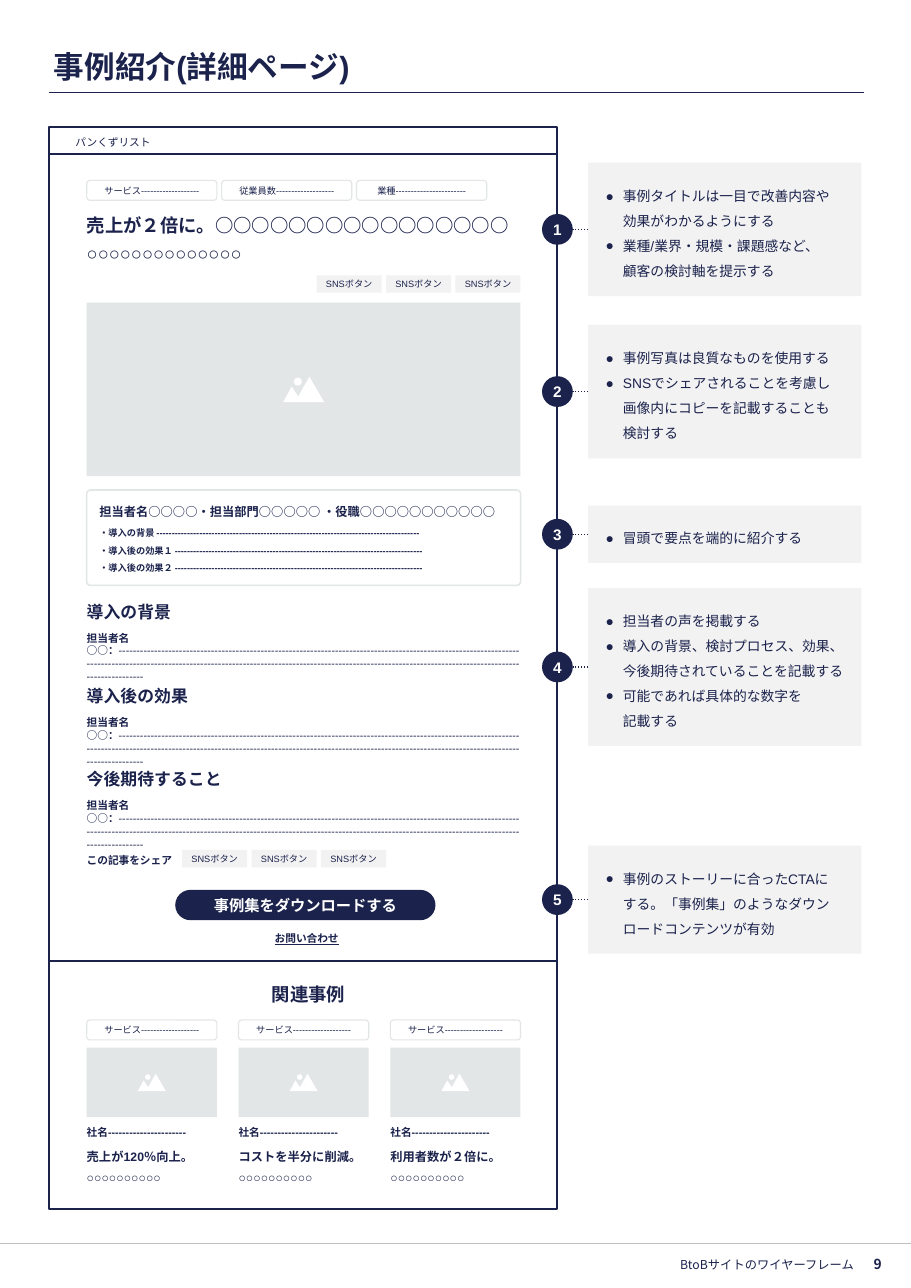
import math
from dataclasses import dataclass

from lxml import etree
from pptx import Presentation
from pptx.dml.color import RGBColor
from pptx.enum.dml import MSO_LINE
from pptx.enum.shapes import MSO_CONNECTOR, MSO_SHAPE
from pptx.enum.text import MSO_ANCHOR, PP_ALIGN
from pptx.oxml.ns import qn
from pptx.util import Cm, Pt

RECTANGLE, ROUNDED, OVAL = MSO_SHAPE.RECTANGLE, MSO_SHAPE.ROUNDED_RECTANGLE, MSO_SHAPE.OVAL
STRAIGHT, DOTTED = MSO_CONNECTOR.STRAIGHT, MSO_LINE.ROUND_DOT
TOP, MIDDLE = MSO_ANCHOR.TOP, MSO_ANCHOR.MIDDLE
LEFT, CENTER, RIGHT = PP_ALIGN.LEFT, PP_ALIGN.CENTER, PP_ALIGN.RIGHT
LEFT_SIDE = 1


@dataclass(frozen=True)
class Theme:
    navy: str = "1B224C"
    white: str = "FFFFFF"
    panel: str = "F2F2F2"
    image: str = "E2E6E6"
    rule: str = "BFBFBF"
    latin: str = "Arial"
    japanese: str = "Noto Sans CJK JP"
    title: int = 20
    headline: int = 12
    heading: int = 11
    button: int = 10
    note: int = 9
    result: int = 8
    label: int = 7
    small: int = 6


THEME = Theme()

TITLE = "事例紹介(詳細ページ)"
FOOTER, PAGE = "BtoBサイトのワイヤーフレーム", "9"
BREADCRUMB = "パンくずリスト"
SERVICE = "サービス" + "-" * 19
TAGS = [SERVICE, "従業員数" + "-" * 19, "業種" + "-" * 23]
HEADLINE = ["売上が２倍に。" + "○" * 16, "○" * 14]
SNS = "SNSボタン"
PERSON = "担当者名○○○○・担当部門○○○○○ ・役職" + "○" * 11
SUMMARY = [
    "・導入の背景 " + "-" * 86,
    "・導入後の効果１ " + "-" * 81,
    "・導入後の効果２ " + "-" * 81,
]
INTERVIEWS = [(13.87, "導入の背景"), (15.82, "導入後の効果"), (17.73, "今後期待すること")]
SPEAKER, SPEECH = "担当者名○○：", "-" * 251
SHARE, DOWNLOAD, CONTACT = "この記事をシェア", "事例集をダウンロードする", "お問い合わせ"
RELATED = "関連事例"
COMPANY = "社名" + "-" * 22
RESULTS = ["売上が120％向上。", "コストを半分に削減。", "利用者数が２倍に。"]
RESULT_DETAIL = "○" * 10
# Top and height in cm, then the bullets
NOTES = [
    (3.75, 3.08, ["事例タイトルは一目で改善内容や\n効果がわかるようにする",
                  "業種/業界・規模・課題感など、\n顧客の検討軸を提示する"]),
    (7.49, 3.08, ["事例写真は良質なものを使用する",
                  "SNSでシェアされることを考慮し\n画像内にコピーを記載することも\n検討する"]),
    (11.66, 1.32, ["冒頭で要点を端的に紹介する"]),
    (13.56, 3.64, ["担当者の声を掲載する",
                   "導入の背景、検討プロセス、効果、今後期待されていることを記載する",
                   "可能であれば具体的な数字を\n記載する"]),
    (19.5, 2.49, ["事例のストーリーに合ったCTAに\nする。「事例集」のようなダウンロードコンテンツが有効"]),
]

FRAME_LEFT, FRAME_WIDTH = 1.14, 11.71
FRAME_EDGES = [2.92, 3.56, 22.17, 27.89]
CONTENT_LEFT, CONTENT_WIDTH = 2, 10
SUMMARY_LEFT, SUMMARY_WIDTH = 2.29, 9.4
TAG_WIDTH, TAG_HEIGHT, TAG_PITCH, CARD_PITCH = 3, 0.46, 3.11, 3.5
SNS_WIDTH, SNS_HEIGHT, SNS_PITCH = 1.5, 0.4, 1.6
NOTE_LEFT, NOTE_WIDTH, NOTE_INDENT = 13.56, 6.3, 0.4
MARKER = 0.71


def add_run(paragraph, text, size, color=THEME.navy, bold=False, underline=None, latin=THEME.latin):
    """Add text as runs, with a line break at each newline."""
    for index, line in enumerate(text.split("\n")):
        if index:
            paragraph.add_line_break()
        run = paragraph.add_run()
        run.text = line
        font = run.font
        font.name, font.size, font.bold, font.underline = latin, Pt(size), bold, underline
        font.color.rgb = RGBColor.from_string(color)
        etree.SubElement(font._element, qn("a:ea"), typeface=THEME.japanese)


def set_frame(frame, anchor=MIDDLE, margins=(0, 0, 0, 0), wrap=True):
    frame.vertical_anchor, frame.word_wrap = anchor, wrap
    frame.margin_left, frame.margin_top, frame.margin_right, frame.margin_bottom = map(Cm, margins)


def write(shape, lines, size, align=LEFT, after=0, anchor=MIDDLE, margins=(0, 0, 0, 0),
          wrap=True, **style):
    frame = shape.text_frame
    set_frame(frame, anchor, margins, wrap)
    for index, line in enumerate(lines):
        paragraph = frame.add_paragraph() if index else frame.paragraphs[0]
        paragraph.alignment, paragraph.space_after = align, Pt(after)
        add_run(paragraph, line, size, **style)


def add_text(box, lines, size, anchor=TOP, **options):
    write(slide.shapes.add_textbox(*map(Cm, box)), lines, size, anchor=anchor, **options)


def add_box(kind, box, fill=None, line=None, width=1.25, corner=None):
    shape = slide.shapes.add_shape(kind, *map(Cm, box))
    shape.shadow.inherit = False
    if fill:
        shape.fill.solid()
        shape.fill.fore_color.rgb = RGBColor.from_string(fill)
    else:
        shape.fill.background()
    if line:
        shape.line.color.rgb = RGBColor.from_string(line)
        shape.line.width = Pt(width)
    else:
        shape.line.fill.background()
    if corner is not None:
        shape.adjustments[0] = corner
    return shape


def add_line(left, right, y, color=THEME.navy, width=1):
    line = slide.shapes.add_connector(STRAIGHT, Cm(left), Cm(y), Cm(right), Cm(y))
    line.line.color.rgb = RGBColor.from_string(color)
    line.line.width = Pt(width)
    etree.SubElement(line._element.spPr, qn("a:effectLst"))
    return line


def add_image_area(left, top, width, height, icon_width):
    """Draw a grey area with a sun-and-mountains icon in its middle."""
    add_box(RECTANGLE, (left, top, width, height), THEME.image)
    icon_left = left + (width - icon_width) / 2
    icon_top = top + (height - 0.62 * icon_width) / 2

    def place(x, y):
        return Cm(icon_left + x * icon_width), Cm(icon_top + y * icon_width)

    sun = [place(0.36 + 0.095 * math.cos(angle), 0.12 + 0.095 * math.sin(angle))
           for angle in (math.tau * step / 32 for step in range(32))]
    mountains = [place(*point) for point in [(0.64, 0), (1, 0.62), (0, 0.62), (0.21, 0.24), (0.37, 0.48)]]
    builder = slide.shapes.build_freeform(*sun[0])
    builder.add_line_segments(sun[1:])
    builder.move_to(*mountains[0])
    builder.add_line_segments(mountains[1:])
    icon = builder.convert_to_shape()
    icon.shadow.inherit = False
    icon.fill.solid()
    icon.fill.fore_color.rgb = RGBColor.from_string(THEME.white)
    icon.line.fill.background()


def add_tag(left, top, text):
    tag = add_box(ROUNDED, (left, top, TAG_WIDTH, TAG_HEIGHT), line=THEME.image, width=0.75)
    write(tag, [text], THEME.small, CENTER, margins=(0.1,) * 4)


def add_sns_buttons(left, top):
    for index in range(3):
        button = add_box(RECTANGLE, (left + index * SNS_PITCH, top, SNS_WIDTH, SNS_HEIGHT), THEME.panel)
        write(button, [SNS], THEME.small, CENTER, margins=(0.1,) * 4, wrap=False)


def add_note(number, top, height, bullets):
    """Draw a bulleted panel, its numbered marker and the dotted line between them."""
    panel = add_box(RECTANGLE, (NOTE_LEFT, top, NOTE_WIDTH, height), THEME.panel)
    write(panel, bullets, THEME.note, margins=(0.4,) * 4)
    for paragraph in panel.text_frame.paragraphs:
        paragraph.line_spacing = 1.5
        properties = paragraph._p.get_or_add_pPr()
        properties.set("marL", str(Cm(NOTE_INDENT)))
        properties.set("indent", str(-Cm(NOTE_INDENT)))
        color = etree.SubElement(properties, qn("a:buClr"))
        etree.SubElement(color, qn("a:srgbClr"), val=THEME.navy)
        etree.SubElement(properties, qn("a:buFont"), typeface=THEME.latin)
        etree.SubElement(properties, qn("a:buChar"), char="●")
    middle = top + height / 2
    marker_left = FRAME_LEFT + FRAME_WIDTH - MARKER / 2
    marker = add_box(OVAL, (marker_left, middle - MARKER / 2, MARKER, MARKER), THEME.navy)
    write(marker, [str(number)], THEME.button, CENTER, wrap=False, color=THEME.white, bold=True)
    link = add_line(NOTE_LEFT, marker_left + MARKER, middle)
    link.line.dash_style = DOTTED
    link.begin_connect(panel, LEFT_SIDE)


presentation = Presentation()
presentation.slide_width, presentation.slide_height = Cm(21), Cm(29.7)
slide = presentation.slides.add_slide(presentation.slide_layouts[5])

title = slide.shapes.title
title.left, title.top, title.width, title.height = map(Cm, (1.14, 0.99, 18.7, 1.07))
write(title, [TITLE], THEME.title, margins=(0.1,) * 4, bold=True)
add_line(1.12, 19.91, 2.13)
add_line(0, 21, 28.68, THEME.rule, 0.5)
add_text((12.7, 28.9, 7.09, 0.5), [FOOTER], THEME.result, MIDDLE, align=RIGHT,
         margins=(0.1,) * 4, latin=THEME.japanese)
add_text((19.84, 28.9, 0.79, 0.5), [PAGE], THEME.note, MIDDLE, align=CENTER,
         margins=(0.1,) * 4, wrap=False, bold=True, latin=THEME.japanese)

frames = [add_box(RECTANGLE, (FRAME_LEFT, top, FRAME_WIDTH, bottom - top), line=THEME.navy)
          for top, bottom in zip(FRAME_EDGES, FRAME_EDGES[1:])]
write(frames[0], [BREADCRUMB], THEME.label, margins=(0.6, 0.1, 0.6, 0))

for index, tag_text in enumerate(TAGS):
    add_tag(CONTENT_LEFT + index * TAG_PITCH, 4.16, tag_text)
add_text((CONTENT_LEFT, 4.93, CONTENT_WIDTH, 1.1), HEADLINE, THEME.headline, after=4, bold=True)
add_sns_buttons(7.3, 6.35)
add_image_area(CONTENT_LEFT, 6.98, CONTENT_WIDTH, 4, 0.95)

add_box(ROUNDED, (CONTENT_LEFT, 11.3, CONTENT_WIDTH, 2.2), line=THEME.image, width=1, corner=0.04)
add_text((SUMMARY_LEFT, 11.63, SUMMARY_WIDTH, 0.34), [PERSON], THEME.result, bold=True)
add_text((SUMMARY_LEFT, 12.17, SUMMARY_WIDTH, 1.1), SUMMARY, THEME.small, after=4, bold=True)

for top, heading in INTERVIEWS:
    add_text((CONTENT_LEFT, top, 3.2, 0.48), [heading], THEME.heading, bold=True)
    speech = slide.shapes.add_textbox(*map(Cm, (CONTENT_LEFT, top + 0.69, CONTENT_WIDTH, 0.9)))
    write(speech, [SPEAKER], THEME.label, anchor=TOP, bold=True)
    add_run(speech.text_frame.paragraphs[0], SPEECH, THEME.label)

add_text((CONTENT_LEFT, 19.69, 2, 0.3), [SHARE], THEME.label, wrap=False, bold=True)
add_sns_buttons(4.2, 19.6)
download = add_box(ROUNDED, (4.04, 20.52, 6, 0.7), THEME.navy, corner=0.5)
write(download, [DOWNLOAD], THEME.button, CENTER, color=THEME.white, bold=True)
add_text((6.32, 21.49, 1.5, 0.3), [CONTACT], THEME.label, align=CENTER, wrap=False,
         bold=True, underline=True)

add_text((2.36, 22.68, 9.5, 0.5), [RELATED], THEME.headline, align=CENTER, bold=True)
for index, result in enumerate(RESULTS):
    left = CONTENT_LEFT + index * CARD_PITCH
    add_tag(left, 23.52, SERVICE)
    add_image_area(left, 24.16, TAG_WIDTH, 1.6, 0.65)
    add_text((left, 25.97, TAG_WIDTH, 0.3), [COMPANY], THEME.label, bold=True)
    add_text((left, 26.47, TAG_WIDTH, 0.89), [result, RESULT_DETAIL], THEME.result, MIDDLE,
             after=4, bold=True)

for number, note in enumerate(NOTES, 1):
    add_note(number, *note)

presentation.save("out.pptx")
